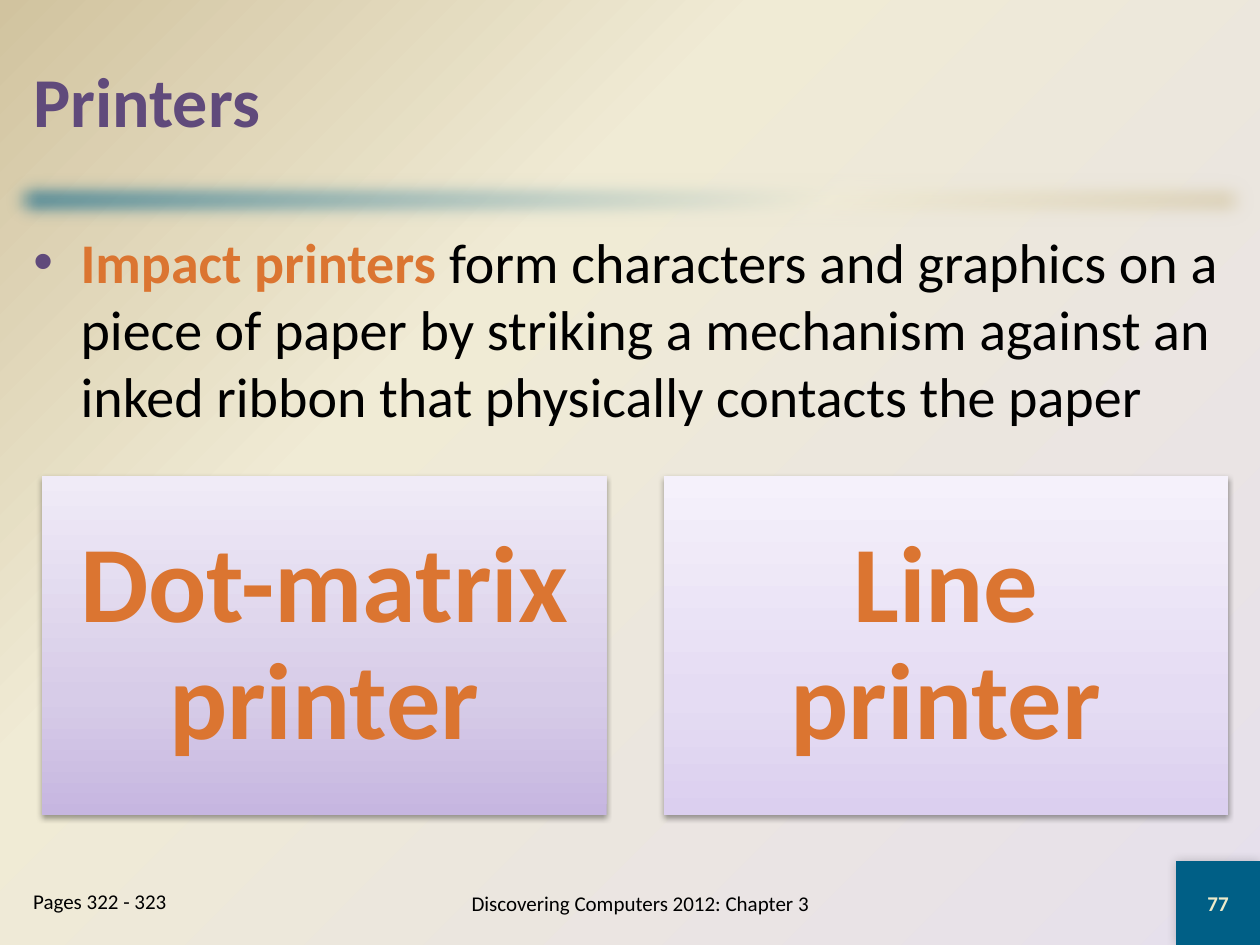
from lxml.etree import SubElement
from pptx import Presentation
from pptx.dml.color import RGBColor
from pptx.enum.shapes import MSO_SHAPE
from pptx.enum.text import MSO_ANCHOR, MSO_AUTO_SIZE, PP_ALIGN
from pptx.oxml.ns import qn
from pptx.util import Cm, Pt

FONT = "Calibri"
BLACK = RGBColor(0x00, 0x00, 0x00)
PURPLE = RGBColor(0x60, 0x4A, 0x7B)
ORANGE = RGBColor(0xDB, 0x75, 0x31)
BLUE = RGBColor(0x00, 0x5F, 0x86)
CREAM = RGBColor(0xF0, 0xEB, 0xD5)
SAND = RGBColor(0xD1, 0xC3, 0x9F)
LILAC = RGBColor(0xE6, 0xE0, 0xEC)
NUMBER_CREAM = RGBColor(0xEE, 0xEB, 0xCA)
DEEP_CARD = [(0, RGBColor(0xC6, 0xB6, 0xE0)), (35, RGBColor(0xD7, 0xCC, 0xE8)),
             (100, RGBColor(0xF0, 0xEB, 0xF7))]
PALE_CARD = [(0, RGBColor(0xDB, 0xCF, 0xEF)), (35, RGBColor(0xE5, 0xDC, 0xF3)),
             (100, RGBColor(0xF5, 0xF1, 0xFB))]


def add_xml(parent, tag, **attributes):
    return SubElement(parent, qn(tag), {key: str(value) for key, value in attributes.items()})


def set_gradient(fill, holder, stops, angle=None):
    """Linear gradient, or a circular one from the lower right corner."""
    fill.gradient()
    gradient = next(holder.iter(qn("a:gradFill")))
    for child in list(gradient):
        gradient.remove(child)
    stop_list = add_xml(gradient, "a:gsLst")
    for position, color in stops:
        stop = add_xml(stop_list, "a:gs", pos=position * 1000)
        add_xml(stop, "a:srgbClr", val=color)
    if angle is None:
        circle = add_xml(gradient, "a:path", path="circle")
        add_xml(circle, "a:fillToRect", l=100000, t=100000)
    else:
        add_xml(gradient, "a:lin", ang=angle * 60000, scaled=0)


def add_effect(shape, tag, **attributes):
    effects = shape._element.spPr.find(qn("a:effectLst"))
    return add_xml(effects, tag, **attributes)


def add_shadow(shape, opacity, blur, distance, angle):
    shadow = add_effect(shape, "a:outerShdw", blurRad=Pt(blur), dist=Pt(distance),
                        dir=angle * 60000, rotWithShape=0)
    color = add_xml(shadow, "a:srgbClr", val=BLACK)
    add_xml(color, "a:alpha", val=opacity * 1000)


def add_rectangle(page, left, top, width, height):
    box = page.shapes.add_shape(MSO_SHAPE.RECTANGLE, Cm(left), Cm(top), Cm(width), Cm(height))
    box.shadow.inherit = False
    box.line.fill.background()
    return box


def place(box, left, top, width, height):
    box.left, box.top, box.width, box.height = Cm(left), Cm(top), Cm(width), Cm(height)


def write(box, spans, size, align=PP_ALIGN.LEFT, anchor=MSO_ANCHOR.MIDDLE):
    """Fill a box with one paragraph of (text, color, bold) spans."""
    frame = box.text_frame
    frame.word_wrap = True
    frame.auto_size = MSO_AUTO_SIZE.NONE
    frame.vertical_anchor = anchor
    para = frame.paragraphs[0]
    para.alignment = align
    para.space_before = Pt(0)
    for text, color, bold in spans:
        span = para.add_run()
        span.text = text
        span.font.name, span.font.size = FONT, Pt(size)
        span.font.bold, span.font.color.rgb = bold, color
    return para


def add_label(page, area, text, **options):
    box = page.shapes.add_textbox(*(Cm(length) for length in area))
    write(box, [(text, BLACK, False)], 12, **options)


def add_bullet(para, color):
    properties = para._p.get_or_add_pPr()
    properties.set("marL", str(Cm(0.95)))
    properties.set("indent", str(-Cm(0.95)))
    add_xml(add_xml(properties, "a:buClr"), "a:srgbClr", val=color)
    add_xml(properties, "a:buFont", typeface="Arial")
    add_xml(properties, "a:buChar", char="•")


def add_card(page, left, text, stops):
    card = add_rectangle(page, left, 9.6, 11.38, 6.83)
    set_gradient(card.fill, card._element, stops, angle=270)
    add_shadow(card, 38, 3.1, 1.6, 90)
    frame = card.text_frame
    frame.margin_left = frame.margin_right = Cm(0.66)
    frame.margin_top = frame.margin_bottom = Cm(0.66)
    para = write(card, [(text, ORANGE, True)], 62, PP_ALIGN.CENTER)
    para.line_spacing = 0.9


def main():
    deck = Presentation()
    deck.slide_width, deck.slide_height = Cm(25.4), Cm(19.05)
    page = deck.slides.add_slide(deck.slide_layouts[1])
    title, body = page.placeholders[0], page.placeholders[1]

    # Background and soft divider bar
    background = page.background.fill
    set_gradient(background, page._element, [(0, LILAC), (65, CREAM), (100, SAND)])
    divider = add_rectangle(page, 0, 3.39, 25.4, 1.27)
    set_gradient(divider.fill, divider._element, [(0, BLUE), (65, CREAM), (100, SAND)], angle=45)
    add_effect(divider, "a:softEdge", rad=Pt(12.5))

    # Title and definition
    place(title, 0.42, 0.42, 24.55, 3.18)
    write(title, [("Printers", PURPLE, True)], 40)
    place(body, 0.42, 4.45, 24.55, 12.9)
    definition = write(body, [
        ("Impact printers ", ORANGE, True),
        ("form characters and graphics on a piece of paper by striking a mechanism "
         "against an inked ribbon that physically contacts the paper", BLACK, False),
    ], 32, anchor=MSO_ANCHOR.TOP)
    add_bullet(definition, PURPLE)

    # Printer types
    add_card(page, 0.85, "Dot-matrix printer", DEEP_CARD)
    add_card(page, 13.38, "Line printer", PALE_CARD)

    # Footer
    add_label(page, (0.42, 17.78, 4.65, 1.27), "Pages 322 - 323", anchor=MSO_ANCHOR.TOP)
    add_label(page, (7.62, 17.58, 10.58, 1.27), "Discovering Computers 2012: Chapter 3",
              align=PP_ALIGN.CENTER)
    number = add_rectangle(page, 23.71, 17.36, 1.69, 1.69)
    number.fill.solid()
    number.fill.fore_color.rgb = BLUE
    add_shadow(number, 20, 6, 0, 225)
    write(number, [("77", NUMBER_CREAM, True)], 12, PP_ALIGN.CENTER)

    deck.save("out.pptx")


if __name__ == "__main__":
    main()
